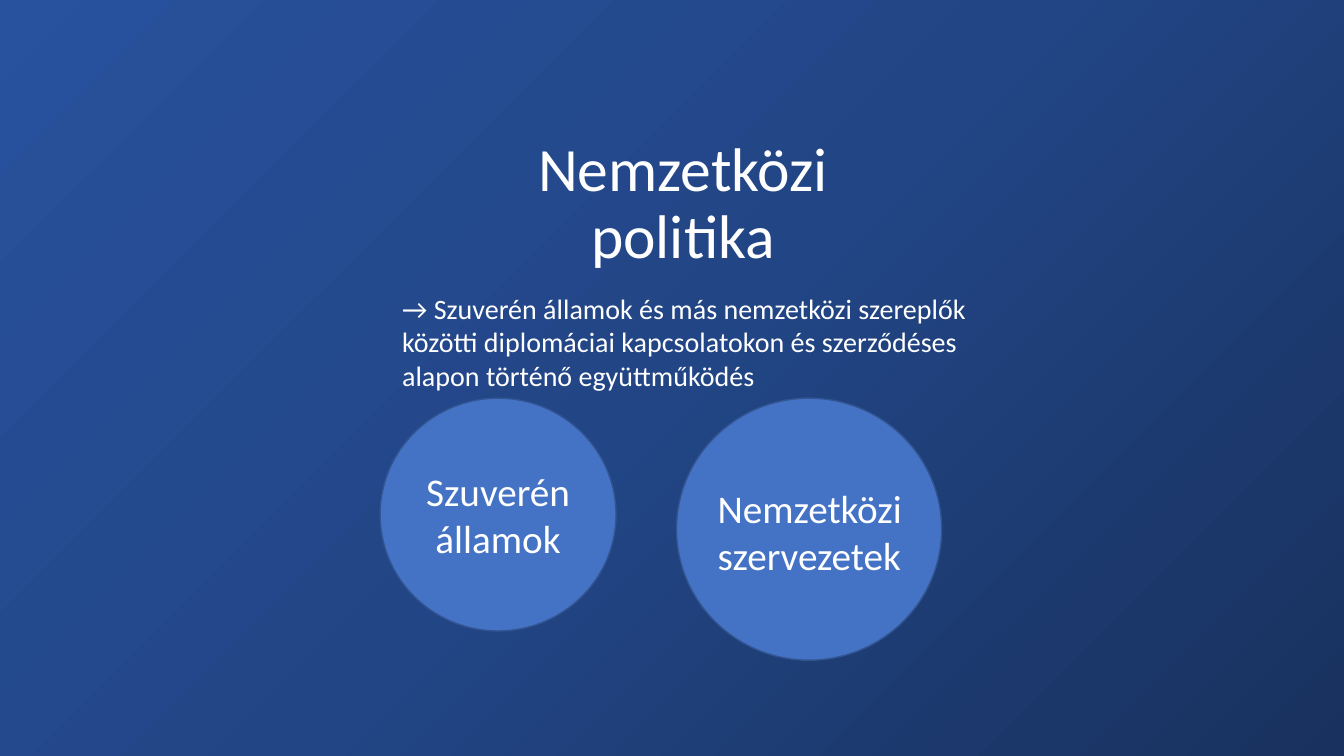
from dataclasses import dataclass

from lxml.etree import SubElement
from pptx import Presentation
from pptx.dml.color import RGBColor
from pptx.enum.shapes import MSO_SHAPE as SHAPE
from pptx.enum.text import MSO_ANCHOR as ANCHOR, PP_ALIGN as ALIGN
from pptx.oxml.ns import qn
from pptx.slide import Slide
from pptx.text.text import TextFrame
from pptx.util import Inches, Pt

COLORS = {
    "white": "FFFFFF",
    "circle": "4472C4",
    "outline": "325491",
    "dark": "18315E",
    "mid": "224585",
    "light": "28529E",
}
FONT = "Calibri"


@dataclass
class Item:
    left: float
    top: float
    width: float
    height: float
    text: str = ""
    size: int = 28
    anchor: ANCHOR = ANCHOR.TOP

    def box(self) -> list[int]:
        return [Inches(v) for v in (self.left, self.top, self.width, self.height)]


TITLE = Item(4.94, 0.92, 3.67, 2.23, "Nemzetközi politika", 44, ANCHOR.MIDDLE)
CIRCLES = [
    Item(3.77, 3.95, 2.34, 2.31, "Szuverén államok", anchor=ANCHOR.MIDDLE),
    Item(6.71, 3.95, 2.63, 2.6),
]
TEXTS = [
    Item(3.89, 2.84, 6.29, 1.11,
         "→ Szuverén államok és más nemzetközi szereplők közötti diplomáciai "
         "kapcsolatokon és szerződéses alapon történő együttműködés", 20),
    Item(7.02, 4.28, 2.06, 1.51, "Nemzetközi szervezetek", anchor=ANCHOR.BOTTOM),
]


def rgb(name: str) -> RGBColor:
    return RGBColor.from_string(COLORS[name])


def write(tf: TextFrame, item: Item, align: ALIGN) -> None:
    tf.word_wrap = True
    tf.vertical_anchor = item.anchor
    p = tf.paragraphs[0]
    p.text = item.text
    p.alignment = align
    p.font.name = FONT
    p.font.size = Pt(item.size)
    p.font.color.rgb = rgb("white")


def paint_background(slide: Slide) -> None:
    fill = slide.background.fill
    fill.gradient()
    fill.gradient_angle = 135
    stops = slide.background._cSld.find(".//" + qn("a:gsLst"))
    for stop in list(stops):
        stops.remove(stop)
    for pos, name in ((0, "dark"), (50, "mid"), (100, "light")):
        stop = SubElement(stops, qn("a:gs"), pos=str(pos * 1000))
        SubElement(stop, qn("a:srgbClr"), val=COLORS[name])


def add_circle(slide: Slide, item: Item) -> None:
    sp = slide.shapes.add_shape(SHAPE.OVAL, *item.box())
    sp.shadow.inherit = False
    sp.fill.solid()
    sp.fill.fore_color.rgb = rgb("circle")
    sp.line.color.rgb = rgb("outline")
    sp.line.width = Pt(1)
    if item.text:
        write(sp.text_frame, item, ALIGN.CENTER)


def add_text(slide: Slide, item: Item) -> None:
    sp = slide.shapes.add_textbox(*item.box())
    write(sp.text_frame, item, ALIGN.LEFT)


def main() -> None:
    prs = Presentation()
    prs.slide_width, prs.slide_height = Inches(13.33), Inches(7.5)
    slide = prs.slides.add_slide(prs.slide_layouts[5])
    paint_background(slide)

    # Title
    title = slide.shapes.title
    title.left, title.top, title.width, title.height = TITLE.box()
    write(title.text_frame, TITLE, ALIGN.CENTER)
    title.text_frame.paragraphs[0].line_spacing = 0.9

    # Actors and definition
    for item in CIRCLES:
        add_circle(slide, item)
    for item in TEXTS:
        add_text(slide, item)

    prs.save("out.pptx")


if __name__ == "__main__":
    main()
